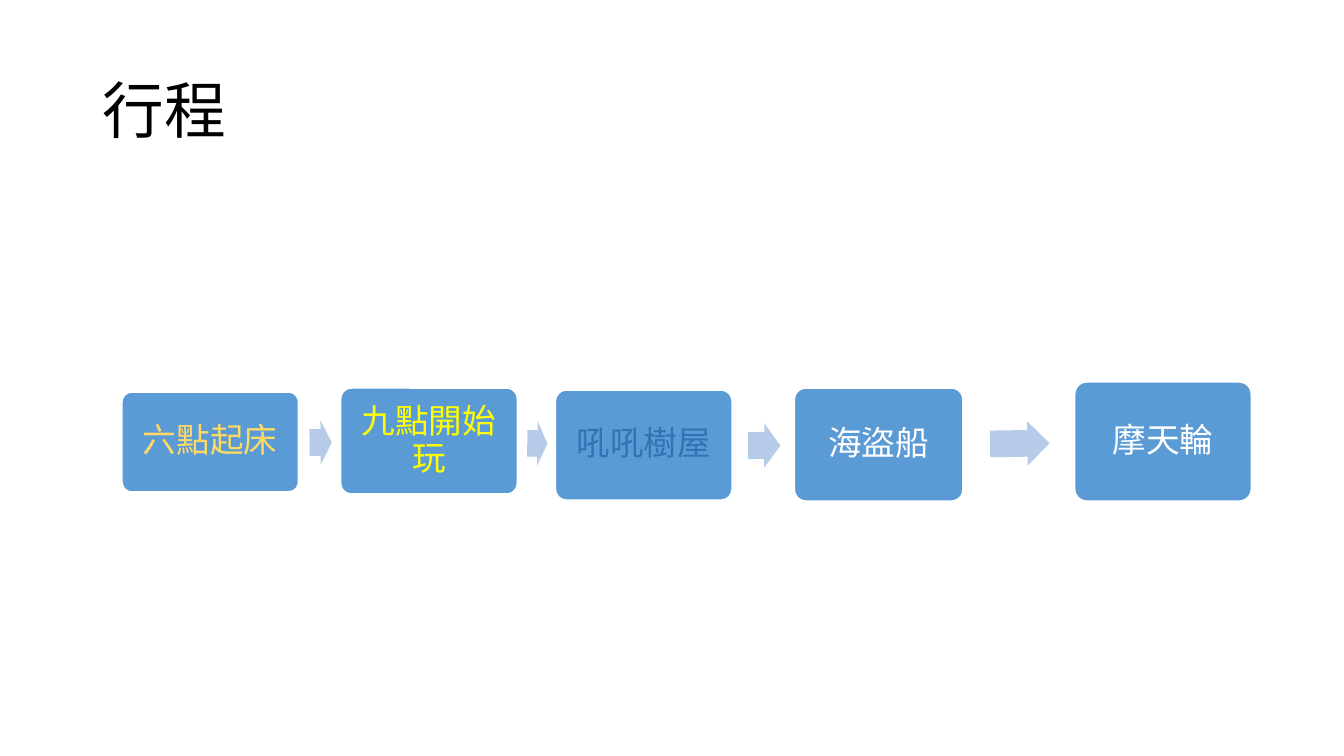
from pptx import Presentation
from pptx.dml.color import RGBColor
from pptx.enum.shapes import MSO_SHAPE as Shape
from pptx.enum.text import MSO_ANCHOR as Anchor, PP_ALIGN as Align

PX = 9144
BLACK = RGBColor(0x00, 0x00, 0x00)
WHITE = RGBColor(0xFF, 0xFF, 0xFF)
BLUE = RGBColor(0x5B, 0x9B, 0xD5)
PALE_BLUE = RGBColor(0xB5, 0xCB, 0xE7)
DARK_BLUE = RGBColor(0x2E, 0x75, 0xB6)
GOLD = RGBColor(0xFF, 0xD9, 0x66)
YELLOW = RGBColor(0xFF, 0xFF, 0x00)


def write(box, text, size, color, align):
    frame = box.text_frame
    para = frame.paragraphs[0]
    span = para.add_run()
    span.text = text
    span.font.color.rgb = color
    formats = [
        (frame, {"word_wrap": True, "vertical_anchor": Anchor.MIDDLE}),
        (para, {"alignment": align, "line_spacing": 0.9}),
        (span.font, {"name": "Calibri", "size": size * 12700}),
    ]
    for side in ("left", "right", "top", "bottom"):
        formats[0][1]["margin_" + side] = 10 * PX
    for target, values in formats:
        for name, value in values.items():
            setattr(target, name, value)


def add_block(kind, place, fill, adjustments):
    block = page.shapes.add_shape(kind, *(n * PX for n in place))
    block.shadow.inherit = False
    block.fill.solid()
    block.fill.fore_color.rgb = fill
    block.line.fill.background()
    for index, value in enumerate(adjustments):
        block.adjustments[index] = value
    return block


deck = Presentation()
deck.slide_width = 1333 * PX
deck.slide_height = 750 * PX
page = deck.slides.add_slide(deck.slide_layouts[6])

title = page.shapes.add_textbox(92 * PX, 40 * PX, 1150 * PX, 145 * PX)
write(title, "行程", 44, BLACK, Align.LEFT)

stops = [
    ("六點起床", GOLD, (121, 389, 175, 99)),
    ("九點開始玩", YELLOW, (338, 385, 175, 105)),
    ("吼吼樹屋", DARK_BLUE, (551, 387, 175, 109)),
    ("海盜船", WHITE, (788, 385, 167, 112)),
    ("摩天輪", WHITE, (1066, 379, 175, 118)),
]
for text, color, place in stops:
    stop = add_block(Shape.ROUNDED_RECTANGLE, place, BLUE, [0.1])
    stop.line.color.rgb = WHITE
    stop.line.width = 12700
    write(stop, text, 24, color, Align.CENTER)

arrows = [
    (307, 417, 22, 359.6),
    (523, 418, 20, 0.9),
    (742, 420, 32, 0.2),
    (982, 418, 59, 359.2),
]
for left, top, width, rotation in arrows:
    arrow = add_block(Shape.RIGHT_ARROW, (left, top, width, 44), PALE_BLUE, [0.6, 0.5])
    arrow.rotation = rotation

deck.save("out.pptx")
